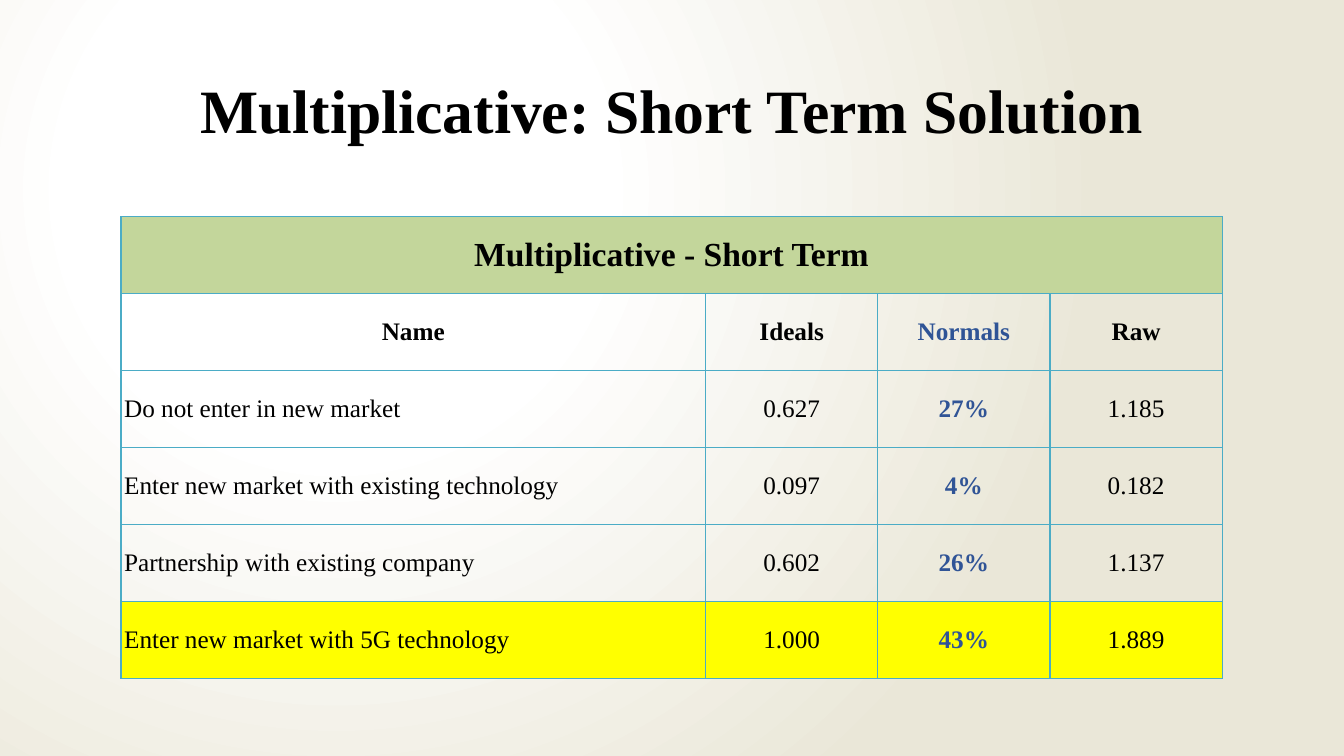
from dataclasses import dataclass

from lxml import etree
from pptx import Presentation
from pptx import util as u
from pptx.dml.color import RGBColor
from pptx.enum import text
from pptx.oxml import ns


@dataclass(frozen=True)
class Theme:
    font: str = "Times New Roman"
    ink: str = "000000"
    normals_heading: str = "2F5496"
    normals_value: str = "305496"
    banner: str = "C3D69B"
    best: str = "FFFF00"
    border: str = "4BACC6"
    glow: str = "FFFFFF"
    edge: str = "EAE7D8"
    title_size: int = 44
    banner_size: int = 24
    body_size: int = 18
    border_width: int = 1


THEME = Theme()
CENTER = text.PP_ALIGN.CENTER
LEFT = text.PP_ALIGN.LEFT

HEADINGS = ("Name", "Ideals", "Normals", "Raw")
NORMALS = HEADINGS.index("Normals")
SOLUTIONS = (
    ("Do not enter in new market", "0.627", "27%", "1.185"),
    ("Enter new market with existing technology", "0.097", "4%", "0.182"),
    ("Partnership with existing company", "0.602", "26%", "1.137"),
    ("Enter new market with 5G technology", "1.000", "43%", "1.889"),
)
BEST = SOLUTIONS[-1]
COLUMN_WIDTHS = (14.73, 4.34, 4.34, 4.34)
ROW_HEIGHT = 1.94


def write(frame, words, size=THEME.body_size, color=THEME.ink, bold=False,
          align=CENTER, spacing=None):
    paragraph = frame.paragraphs[0]
    paragraph.alignment = align
    paragraph.line_spacing = spacing
    run = paragraph.add_run()
    run.text = words
    run.font.name = THEME.font
    run.font.size = u.Pt(size)
    run.font.bold = bold
    run.font.color.rgb = RGBColor.from_string(color)


def paint_background(slide):
    fill = slide.background.fill
    fill.gradient()
    stops = ((0.34, THEME.glow), (1, THEME.edge))
    for stop, (position, color) in zip(fill.gradient_stops, stops):
        stop.position = position
        stop.color.rgb = RGBColor.from_string(color)
    # Turn the linear gradient into a circular one
    linear = next(slide.element.iter(ns.qn("a:lin")))
    circle = etree.Element(ns.qn("a:path"), {"path": "circle"})
    etree.SubElement(circle, ns.qn("a:fillToRect"),
                     l="50000", t="50000", r="100000", b="100000")
    linear.getparent().replace(linear, circle)


def add_title(slide, words):
    title = slide.shapes.title
    title.left, title.top = u.Cm(2.33), u.Cm(1.01)
    title.width, title.height = u.Cm(29.21), u.Cm(3.68)
    title.text_frame.vertical_anchor = text.MSO_ANCHOR.MIDDLE
    write(title.text_frame, words, size=THEME.title_size, bold=True, spacing=0.9)


def format_cell(cell, fill=None):
    cell.vertical_anchor = text.MSO_ANCHOR.MIDDLE
    cell.margin_left = cell.margin_right = u.Cm(0.08)
    cell.margin_top = cell.margin_bottom = 0
    if fill:
        cell.fill.solid()
        cell.fill.fore_color.rgb = RGBColor.from_string(fill)
    else:
        cell.fill.background()
    # Borders come before the fill in the cell properties
    properties = cell._tc.get_or_add_tcPr()
    for index, side in enumerate(("lnL", "lnR", "lnT", "lnB")):
        line = etree.Element(ns.qn(f"a:{side}"), w=str(u.Pt(THEME.border_width)))
        solid = etree.SubElement(line, ns.qn("a:solidFill"))
        etree.SubElement(solid, ns.qn("a:srgbClr"), val=THEME.border)
        properties.insert(index, line)


def add_solution_table(slide, banner):
    row_count = len(SOLUTIONS) + 2
    table = slide.shapes.add_table(
        row_count, len(HEADINGS), u.Cm(3.05), u.Cm(5.46),
        u.Cm(sum(COLUMN_WIDTHS)), u.Cm(row_count * ROW_HEIGHT)).table
    table.first_row = table.horz_banding = False
    for column, width in zip(table.columns, COLUMN_WIDTHS):
        column.width = u.Cm(width)
    for row in table.rows:
        row.height = u.Cm(ROW_HEIGHT)

    # Banner across all columns
    for cell in table.rows[0].cells:
        format_cell(cell, THEME.banner)
    table.cell(0, 0).merge(table.cell(0, len(HEADINGS) - 1))
    write(table.cell(0, 0).text_frame, banner, size=THEME.banner_size, bold=True)

    # Column headings
    for column, heading in enumerate(HEADINGS):
        cell = table.cell(1, column)
        format_cell(cell)
        color = THEME.normals_heading if column == NORMALS else THEME.ink
        write(cell.text_frame, heading, color=color, bold=True)

    # Solutions, with the best one highlighted
    for row, solution in enumerate(SOLUTIONS, start=2):
        for column, value in enumerate(solution):
            cell = table.cell(row, column)
            format_cell(cell, THEME.best if solution == BEST else None)
            is_normal = column == NORMALS
            write(cell.text_frame, value, bold=is_normal,
                  color=THEME.normals_value if is_normal else THEME.ink,
                  align=CENTER if column else LEFT)


def main():
    deck = Presentation()
    deck.slide_width, deck.slide_height = u.Cm(33.87), u.Cm(19.05)
    slide = deck.slides.add_slide(deck.slide_layouts.get_by_name("Title Only"))
    paint_background(slide)
    add_title(slide, "Multiplicative: Short Term Solution")
    add_solution_table(slide, "Multiplicative - Short Term")
    deck.save("out.pptx")


if __name__ == "__main__":
    main()
